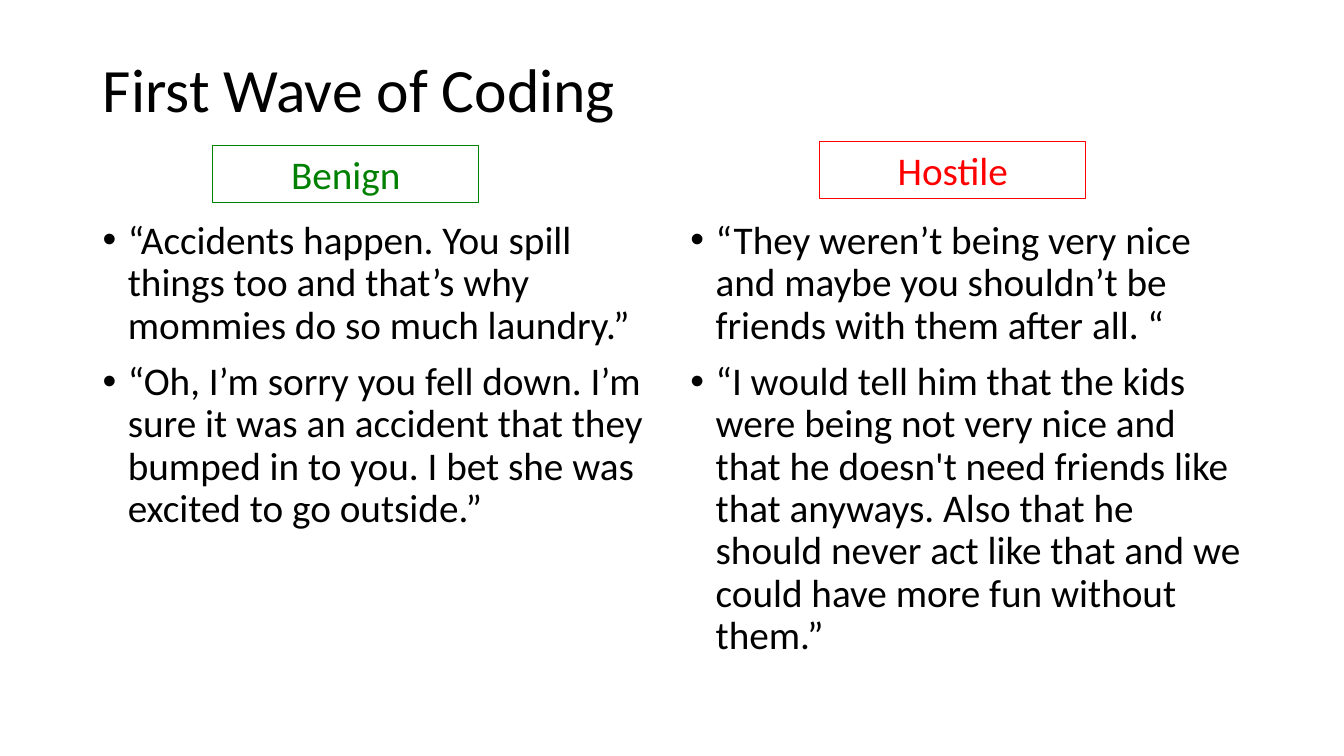
from lxml import etree
from pptx import Presentation
from pptx.dml.color import RGBColor
from pptx.enum import shapes, text
from pptx.oxml.ns import qn
from pptx.util import Inches, Pt

TITLE = "First Wave of Coding"
COLORS = {"text": "000000", "benign": "008000", "hostile": "FF0000"}
# label, colour, label left and top, quotes
GROUPS = [
    ("Benign", "benign", 2.11, 1.44, [
        "“Accidents happen. You spill things too and that’s why mommies do so much laundry.”",
        "“Oh, I’m sorry you fell down. I’m sure it was an accident that they bumped in to you. "
        "I bet she was excited to go outside.”",
    ]),
    ("Hostile", "hostile", 8.13, 1.4, [
        "“They weren’t being very nice and maybe you shouldn’t be friends with them after all. “",
        "“I would tell him that the kids were being not very nice and that he doesn't need "
        "friends like that anyways. Also that he should never act like that and we could have "
        "more fun without them.”",
    ]),
]
LEFT, WIDTH, GAP = 0.92, 11.5, 0.16
COL = (WIDTH - GAP) / 2


def style(para, size, color, align=text.PP_ALIGN.LEFT):
    para.alignment = align
    for run in para.runs:
        run.font.name = "Calibri"
        run.font.size = Pt(size)
        run.font.color.rgb = RGBColor.from_string(COLORS[color])


def bullet(para):
    props = para._p.get_or_add_pPr()
    props.set("marL", str(Inches(0.25)))
    props.set("indent", str(-Inches(0.25)))
    etree.SubElement(props, qn("a:buFont")).set("typeface", "Arial")
    etree.SubElement(props, qn("a:buChar")).set("char", "•")


def add_title(slide):
    title = slide.shapes.title
    title.left, title.top = Inches(LEFT), Inches(0.19)
    title.width, title.height = Inches(WIDTH), Inches(1.45)
    frame = title.text_frame
    frame.text = TITLE
    frame.auto_size = text.MSO_AUTO_SIZE.NONE
    frame.vertical_anchor = text.MSO_ANCHOR.MIDDLE
    frame.paragraphs[0].line_spacing = 0.9
    style(frame.paragraphs[0], 44, "text")


def add_quotes(slide, left, quotes):
    box = slide.shapes.add_textbox(Inches(left), Inches(2.14), Inches(COL), Inches(4.76))
    frame = box.text_frame
    frame.word_wrap = True
    frame.text = "\n".join(quotes)
    for para in frame.paragraphs:
        para.line_spacing = 0.9
        para.space_before = Pt(10)
        style(para, 28, "text")
        bullet(para)


def add_label(slide, label, color, left, top):
    box = slide.shapes.add_shape(shapes.MSO_SHAPE.RECTANGLE, Inches(left), Inches(top),
                                 Inches(2.64), Inches(0.57))
    box.shadow.inherit = False
    box.fill.background()
    box.line.color.rgb = RGBColor.from_string(COLORS[color])
    box.line.width = Pt(0.75)
    frame = box.text_frame
    frame.text = label
    frame.auto_size = text.MSO_AUTO_SIZE.SHAPE_TO_FIT_TEXT
    frame.vertical_anchor = text.MSO_ANCHOR.TOP
    style(frame.paragraphs[0], 28, color, text.PP_ALIGN.CENTER)


def main():
    deck = Presentation()
    deck.slide_width, deck.slide_height = Inches(13.33), Inches(7.5)
    slide = deck.slides.add_slide(deck.slide_layouts[5])
    add_title(slide)
    for i, (label, color, left, top, quotes) in enumerate(GROUPS):
        add_quotes(slide, LEFT + i * (COL + GAP), quotes)
        add_label(slide, label, color, left, top)
    deck.save("out.pptx")


if __name__ == "__main__":
    main()
